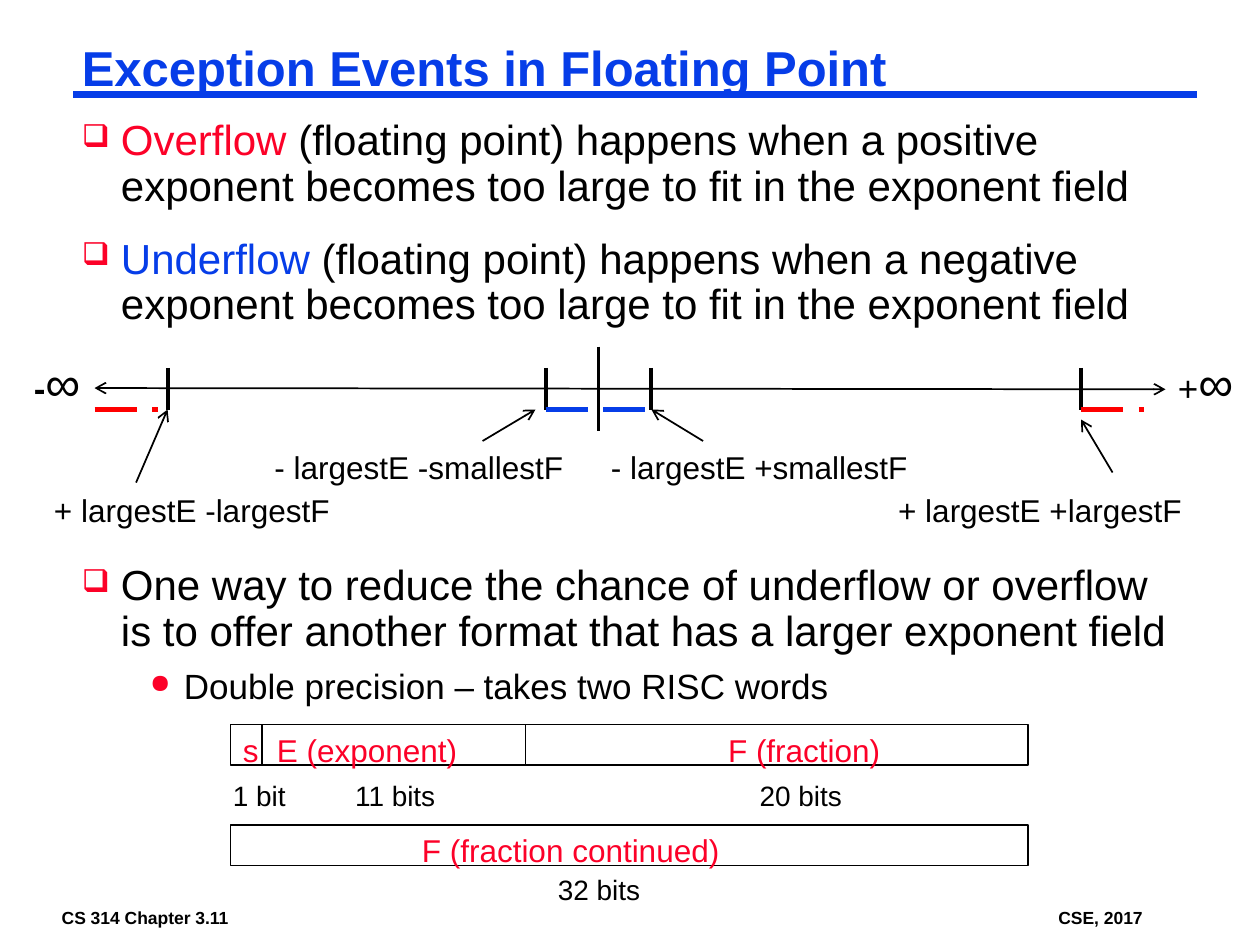
from dataclasses import dataclass

from lxml import etree
from pptx import Presentation
from pptx.dml.color import RGBColor
from pptx.enum.dml import MSO_LINE
from pptx.enum.shapes import MSO_CONNECTOR, MSO_SHAPE
from pptx.enum.text import MSO_AUTO_SIZE
from pptx.oxml.ns import qn
from pptx.util import Inches, Pt

STRAIGHT = MSO_CONNECTOR.STRAIGHT
RECT = MSO_SHAPE.RECTANGLE
DASH = MSO_LINE.LONG_DASH
FIT = MSO_AUTO_SIZE.SHAPE_TO_FIT_TEXT


@dataclass(frozen=True)
class Theme:
    font: str = "Arial"
    black: str = "000000"
    blue: str = "063DE8"
    red: str = "FC0128"
    alert: str = "FF0000"
    title: int = 28
    body: int = 24
    sub: int = 20
    label: int = 18
    bits: int = 16
    foot: int = 10
    thin: float = 1
    tick: float = 2.25
    zone: float = 3
    rule: float = 4.5


T = Theme()


@dataclass(frozen=True)
class Run:
    text: str
    size: float
    color: str = T.black
    bold: bool = False


@dataclass(frozen=True)
class Item:
    """A bulleted paragraph; lengths in inches, gap in points."""
    runs: tuple
    mark: str = "❑"
    left: float = 0.31
    hang: float = 0.31
    gap: float = 16
    pitch: float = 0.9


@dataclass(frozen=True)
class Label:
    left: float
    top: float
    width: float
    height: float
    runs: tuple


@dataclass(frozen=True)
class Line:
    x1: float
    y1: float
    x2: float
    y2: float
    width: float = T.thin
    color: str = T.black
    dash: bool = False
    ends: tuple = ()


def draw_line(shapes, line: Line) -> None:
    spots = (Inches(v) for v in (line.x1, line.y1, line.x2, line.y2))
    shape = shapes.add_connector(STRAIGHT, *spots)
    shape.line.width = Pt(line.width)
    shape.line.color.rgb = RGBColor.from_string(line.color)
    if line.dash:
        shape.line.dash_style = DASH
    for end in line.ends:
        etree.SubElement(shape.line._get_or_add_ln(), qn("a:" + end), type="arrow")
    etree.SubElement(shape._element.spPr, qn("a:effectLst"))


def add_runs(para, runs: tuple) -> None:
    for run in runs:
        part = para.add_run()
        part.text = run.text
        look = {"name": T.font, "size": Pt(run.size), "bold": run.bold}
        for key, value in look.items():
            setattr(part.font, key, value)
        part.font.color.rgb = RGBColor.from_string(run.color)


def add_frame(shapes, left: float, top: float, width: float, height: float,
              wrap: bool, tight: bool):
    """Add a text box and return its text frame."""
    box = shapes.add_textbox(*(Inches(v) for v in (left, top, width, height)))
    side, edge = (0.07, 0.03) if tight else (0.1, 0.05)
    look = {"word_wrap": wrap, "auto_size": FIT,
            "margin_left": Inches(side), "margin_right": Inches(side),
            "margin_top": Inches(edge), "margin_bottom": Inches(edge)}
    for key, value in look.items():
        setattr(box.text_frame, key, value)
    return box.text_frame


def draw_label(shapes, label: Label, tight: bool = False) -> None:
    frame = add_frame(shapes, label.left, label.top, label.width, label.height,
                      False, tight)
    add_runs(frame.paragraphs[0], label.runs)


def draw_title(shapes, text: str) -> None:
    para = add_frame(shapes, 0.58, 0.33, 8.92, 0.46, True, True).paragraphs[0]
    para.line_spacing = 0.87
    add_runs(para, (Run(text, T.title, T.blue, True),))


def draw_list(shapes, top: float, height: float, items: tuple) -> None:
    frame = add_frame(shapes, 0.58, top, 8.92, height, True, True)
    for i, item in enumerate(items):
        para = frame.add_paragraph() if i else frame.paragraphs[0]
        para.line_spacing = item.pitch
        para.space_before = Pt(item.gap if i else 0)
        props = para._p.get_or_add_pPr()
        props.set("marL", str(Inches(item.left)))
        props.set("indent", str(-Inches(item.hang)))
        tint = etree.SubElement(props, qn("a:buClr"))
        etree.SubElement(tint, qn("a:srgbClr"), val=T.red)
        etree.SubElement(props, qn("a:buSzPct"), val="75000")
        etree.SubElement(props, qn("a:buChar"), char=item.mark)
        add_runs(para, item.runs)


def draw_word(shapes, top: float) -> None:
    """Draw the frame of one 32-bit word."""
    box = shapes.add_shape(RECT, Inches(1.83), Inches(top), Inches(6.33), Inches(0.32))
    box.shadow.inherit = False
    box.fill.background()
    box.line.width = Pt(T.thin)
    box.line.color.rgb = RGBColor.from_string(T.black)


def event(name: str, color: str, sign: str) -> Item:
    text = (f" (floating point) happens when a {sign} exponent becomes"
            " too large to fit in the exponent field")
    return Item((Run(name, T.body, color), Run(text, T.body)))


FOOT = (
    Label(0.42, 7.17, 1.5, 0.22, (Run("CS 314 Chapter 3.11", T.foot, bold=True),)),
    Label(8.33, 7.17, 0.81, 0.22, (Run("CSE, 2017", T.foot, bold=True),)),
)
EVENTS = (event("Overflow", T.red, "positive"), event("Underflow", T.blue, "negative"))
REMEDY = (
    Item((Run("One way to reduce the chance of underflow or overflow is to offer"
              " another format that has a larger exponent field", T.body),)),
    Item((Run("Double precision – takes two RISC words", T.sub),),
         "●", 0.81, 0.27, 9, 0.85),
)
FIELDS = ((1.83, 5.75, 0.33, "s"), (2.1, 5.75, 1.63, "E (exponent)"),
          (5.68, 5.75, 1.41, "F (fraction)"), (3.25, 6.55, 2.59, "F (fraction continued)"))
BITS = ((1.75, 6.13, 0.62, "1 bit"), (2.72, 6.13, 0.84, "11 bits"),
        (5.93, 6.13, 0.86, "20 bits"), (4.33, 6.88, 0.86, "32 bits"))
BOUNDS = ((7.03, 3.85, 2.47, "+ largestE +largestF"), (0.33, 3.85, 2.41, "+ largestE -largestF"),
          (4.75, 3.51, 2.58, "- largestE +smallestF"), (2.08, 3.51, 2.59, "- largestE -smallestF"))
LIMITS = (
    Label(9.25, 2.75, 0.65, 0.57, (Run("+", T.sub), Run("∞", T.title))),
    Label(0.17, 2.75, 0.58, 0.57, (Run("-", T.sub, bold=True), Run("∞", T.title))),
)
AXIS = Line(0.75, 3.08, 9.25, 3.09, ends=("headEnd", "tailEnd"))
TICKS = (1.33, 4.33, 5.17, 8.58)
ZONES = ((0.75, 1.25, T.alert), (4.33, 5.17, T.blue), (8.58, 9.08, T.alert))
ARROWS = ((8.83, 3.75, 8.58, 3.33), (1.08, 3.83, 1.33, 3.25),
          (3.83, 3.5, 4.25, 3.25), (5.58, 3.5, 5.17, 3.25))


def main() -> None:
    deck = Presentation()
    deck.slide_width, deck.slide_height = Inches(10), Inches(7.5)
    shapes = deck.slides.add_slide(deck.slide_layouts[6]).shapes

    for label in FOOT:
        draw_label(shapes, label, True)
    draw_line(shapes, Line(0.58, 0.75, 9.5, 0.75, T.rule, T.blue))
    draw_title(shapes, "Exception Events in Floating Point")
    draw_list(shapes, 0.92, 1.77, EVENTS)
    draw_list(shapes, 4.45, 1.22, REMEDY)

    for top in (5.75, 6.55):
        draw_word(shapes, top)
    lines = [Line(x, 5.75, x, 6.07) for x in (2.08, 4.17)]
    lines += [AXIS, Line(4.75, 2.75, 4.75, 3.42, T.tick)]
    lines += [Line(x, 2.92, x, 3.25, T.tick) for x in TICKS]
    lines += [Line(a, 3.25, b, 3.25, T.zone, color, True) for a, b, color in ZONES]
    lines += [Line(*spots, ends=("tailEnd",)) for spots in ARROWS]
    for line in lines:
        draw_line(shapes, line)

    for label in LIMITS:
        draw_label(shapes, label)
    groups = ((FIELDS, 0.4, T.label, T.red), (BITS, 0.37, T.bits, T.black),
              (BOUNDS, 0.4, T.label, T.black))
    for group, height, size, color in groups:
        for left, top, width, text in group:
            draw_label(shapes, Label(left, top, width, height, (Run(text, size, color),)))

    deck.save("out.pptx")


if __name__ == "__main__":
    main()
